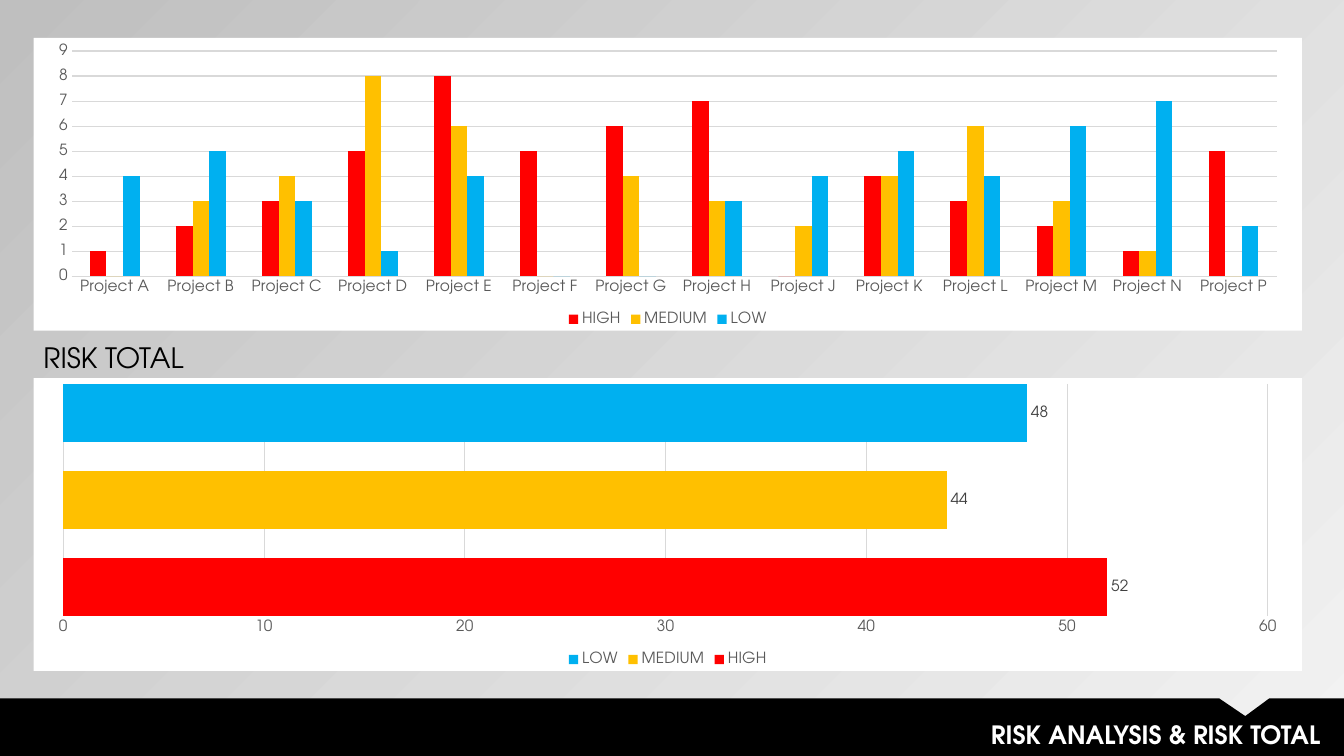
"""Build a risk slide with a column chart per project and a bar chart of totals."""
from lxml import etree
from pptx import Presentation
from pptx.chart.data import CategoryChartData
from pptx.dml.color import RGBColor
from pptx.enum.chart import XL_CHART_TYPE, XL_LABEL_POSITION, XL_LEGEND_POSITION, XL_TICK_MARK
from pptx.enum.text import MSO_ANCHOR, MSO_AUTO_SIZE, PP_ALIGN
from pptx.oxml import parse_xml
from pptx.util import Pt

PX = 9525
WIDTH, HEIGHT = 1280, 720
FONT = "TeX Gyre Adventor"
COLUMNS = XL_CHART_TYPE.COLUMN_CLUSTERED
BARS = XL_CHART_TYPE.BAR_CLUSTERED
BOTTOM = XL_LEGEND_POSITION.BOTTOM
OUTSIDE_END = XL_LABEL_POSITION.OUTSIDE_END
NO_TICK = XL_TICK_MARK.NONE
MIDDLE = MSO_ANCHOR.MIDDLE
NO_FIT = MSO_AUTO_SIZE.NONE
LEFT, RIGHT = PP_ALIGN.LEFT, PP_ALIGN.RIGHT
COLORS = {
    "black": "000000", "white": "FFFFFF", "light": "F2F2F2", "dark": "BFBFBF",
    "grid": "D9D9D9", "axis": "595959", "label": "404040",
    "HIGH": "FF0000", "MEDIUM": "FFC000", "LOW": "00B0F0",
}
PROJECTS = [f"Project {letter}" for letter in "ABCDEFGHJKLMNP"]
RISKS = {
    "HIGH": [1, 2, 3, 5, 8, 5, 6, 7, 0, 4, 3, 2, 1, 5],
    "MEDIUM": [0, 3, 4, 8, 6, 0, 4, 3, 2, 4, 6, 3, 1, 0],
    "LOW": [4, 5, 3, 1, 4, 0, 0, 3, 4, 5, 4, 6, 7, 2],
}
TOTALS = {name: [sum(values)] for name, values in RISKS.items()}
CHART_NS = "http://schemas.openxmlformats.org/drawingml/2006/chart"
DRAWING_NS = "http://schemas.openxmlformats.org/drawingml/2006/main"


def color(name):
    return RGBColor.from_string(COLORS[name])


def style_font(font, size, color_name, bold=False):
    font.name = FONT
    font.size = Pt(size)
    font.bold = bold
    font.color.rgb = color(color_name)


def place(shape, left, top, width, height):
    shape.left, shape.top = left * PX, top * PX
    shape.width, shape.height = width * PX, height * PX


def write_text(shape, text, size, color_name, align, bold=False):
    paragraph = shape.text_frame.paragraphs[0]
    paragraph.alignment = align
    run = paragraph.add_run()
    run.text = text
    style_font(run.font, size, color_name, bold)


def paint_background(slide):
    fill = slide.background.fill
    fill.gradient()
    fill.gradient_angle = 135
    for stop, name in zip(fill.gradient_stops, ("light", "dark")):
        stop.color.rgb = color(name)


def add_footer_bar(slide):
    top = 665
    builder = slide.shapes.build_freeform(0, top, scale=PX)
    builder.add_line_segments([
        (1161, top), (1186, 682), (1209, top), (WIDTH, top), (WIDTH, HEIGHT), (0, HEIGHT),
    ], close=True)
    bar = builder.convert_to_shape()
    bar.shadow.inherit = False
    bar.fill.solid()
    bar.fill.fore_color.rgb = color("black")
    bar.line.fill.background()
    return bar


def set_title(slide, bar, text):
    title = slide.shapes.title
    bar.element.addnext(title.element)
    place(title, 397, 680, 870, 38)
    frame = title.text_frame
    frame.auto_size = NO_FIT
    frame.word_wrap = True
    frame.vertical_anchor = MIDDLE
    write_text(title, text, 18, "white", RIGHT, bold=True)


def add_heading(slide, text):
    box = slide.shapes.add_textbox(32 * PX, 320 * PX, 157 * PX, 42 * PX)
    box.text_frame.word_wrap = False
    write_text(box, text, 20, "black", LEFT)


def fill_chart_area(chart):
    properties = parse_xml(
        f'<c:spPr xmlns:c="{CHART_NS}" xmlns:a="{DRAWING_NS}"><a:solidFill>'
        f'<a:srgbClr val="{COLORS["white"]}"/></a:solidFill></c:spPr>')
    line = etree.SubElement(properties, f"{{{DRAWING_NS}}}ln")
    etree.SubElement(line, f"{{{DRAWING_NS}}}noFill")
    chart.element.find(f"{{{CHART_NS}}}chart").addnext(properties)


def style_value_axis(axis, maximum, step):
    axis.minimum_scale, axis.maximum_scale = 0, maximum
    axis.major_unit = step
    axis.major_tick_mark = axis.minor_tick_mark = NO_TICK
    axis.format.line.fill.background()
    axis.has_major_gridlines = True
    grid_line = axis.major_gridlines.format.line
    grid_line.color.rgb = color("grid")
    grid_line.width = Pt(0.75)
    style_font(axis.tick_labels.font, 11, "axis")


def style_category_axis(axis):
    axis.major_tick_mark = axis.minor_tick_mark = NO_TICK
    axis.format.line.color.rgb = color("grid")
    axis.format.line.width = Pt(0.75)
    style_font(axis.tick_labels.font, 11, "axis")


def add_risk_chart(slide, kind, top, categories, series, maximum, step, gap, overlap):
    data = CategoryChartData(number_format="0")
    data.categories = categories
    for name, values in series.items():
        data.add_series(name, values)
    frame = slide.shapes.add_chart(kind, 32 * PX, top * PX, 1208 * PX, 279 * PX, data)
    chart = frame.chart
    chart.has_title = False
    style_font(chart.font, 11, "black")
    fill_chart_area(chart)
    chart.has_legend = True
    chart.legend.position = BOTTOM
    chart.legend.include_in_layout = False
    style_font(chart.legend.font, 11, "axis")
    style_value_axis(chart.value_axis, maximum, step)
    style_category_axis(chart.category_axis)
    plot = chart.plots[0]
    plot.vary_by_categories = False
    plot.gap_width, plot.overlap = gap, overlap
    for item in plot.series:
        item.format.fill.solid()
        item.format.fill.fore_color.rgb = color(item.name)
    return chart


def show_values(chart):
    for series in chart.plots[0].series:
        labels = series.data_labels
        labels.show_value = True
        labels.position = OUTSIDE_END
        labels.number_format = "0"
        labels.number_format_is_linked = False
        style_font(labels.font, 11, "label")


def main():
    presentation = Presentation()
    presentation.slide_width, presentation.slide_height = WIDTH * PX, HEIGHT * PX
    slide = presentation.slides.add_slide(presentation.slide_layouts[5])
    paint_background(slide)
    bar = add_footer_bar(slide)
    set_title(slide, bar, "RISK ANALYSIS & RISK TOTAL")
    add_risk_chart(slide, COLUMNS, 36, PROJECTS, RISKS, 9, 1, gap=219, overlap=0)
    totals = add_risk_chart(slide, BARS, 360, ["1"], TOTALS, 60, 10, gap=0, overlap=-50)
    totals.category_axis.visible = False
    show_values(totals)
    add_heading(slide, "RISK TOTAL")
    presentation.save("out.pptx")


if __name__ == "__main__":
    main()
